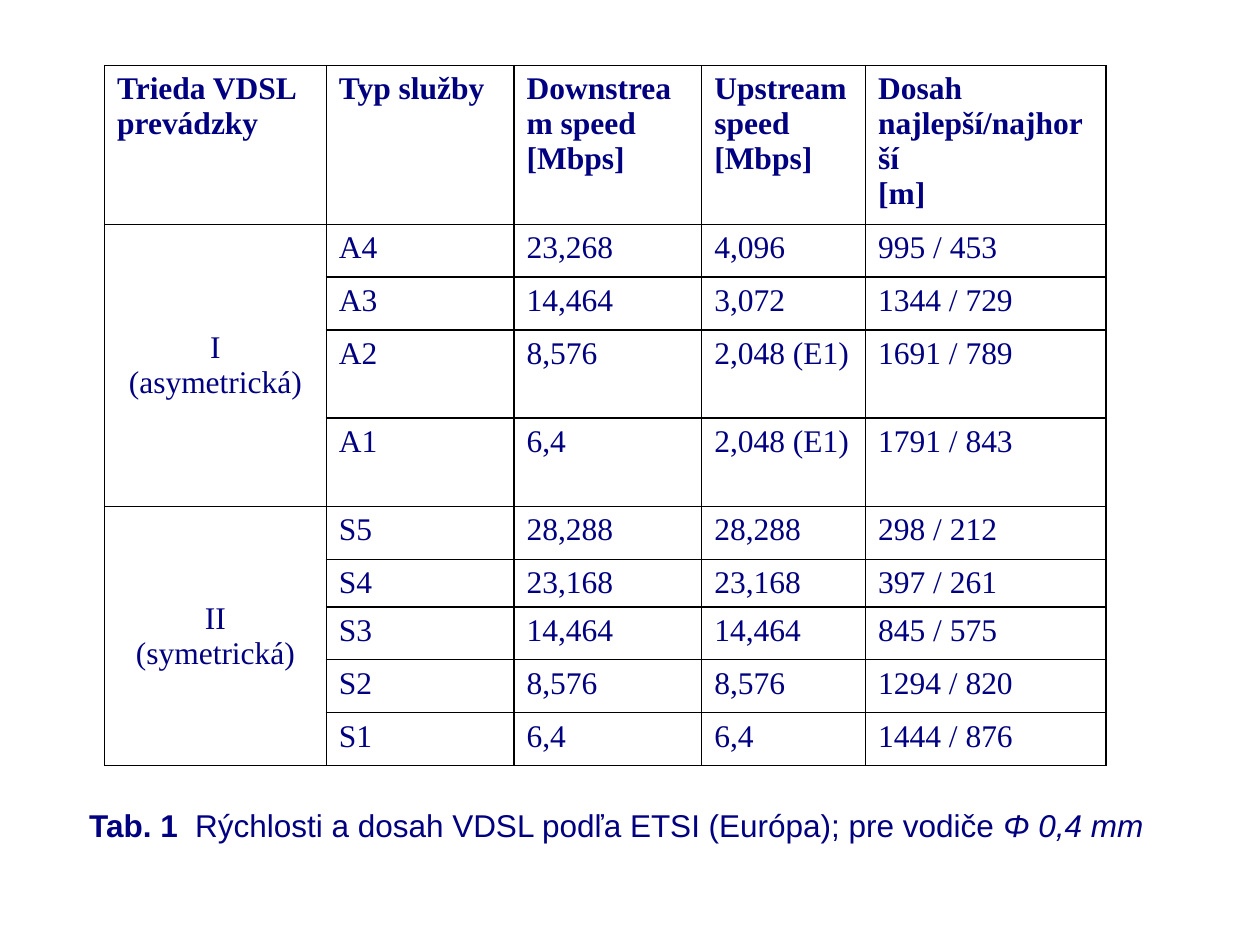
from lxml import etree
from pptx import Presentation
from pptx.dml.color import RGBColor
from pptx.enum.text import MSO_ANCHOR, PP_ALIGN
from pptx.oxml.ns import qn
from pptx.util import Inches, Pt

MIDDLE = MSO_ANCHOR.MIDDLE
CENTER = PP_ALIGN.CENTER
SIDES = ("a:lnL", "a:lnR", "a:lnT", "a:lnB")

NAVY, BLACK = "000080", "000000"
SERIF, SANS = "Times New Roman", "Arial"

COLS = [1.76, 1.49, 1.49, 1.3, 1.91]
ROWS = [1.26, 0.42, 0.42, 0.7, 0.7, 0.42, 0.34, 0.42, 0.42, 0.42]

HEAD = ["Trieda VDSL prevádzky", "Typ služby", "Downstream speed\n[Mbps]",
        "Upstream speed\n[Mbps]", "Dosah najlepší/najhorší\n[m]"]
GROUPS = {
    "I\n(asymetrická)": [
        ["A4", "23,268", "4,096", "995 / 453"],
        ["A3", "14,464", "3,072", "1344 / 729"],
        ["A2", "8,576", "2,048 (E1)", "1691 / 789"],
        ["A1", "6,4", "2,048 (E1)", "1791 / 843"],
    ],
    "II\n(symetrická)": [
        ["S5", "28,288", "28,288", "298 / 212"],
        ["S4", "23,168", "23,168", "397 / 261"],
        ["S3", "14,464", "14,464", "845 / 575"],
        ["S2", "8,576", "8,576", "1294 / 820"],
        ["S1", "6,4", "6,4", "1444 / 876"],
    ],
}


def color(code):
    return RGBColor.from_string(code)


class Page:
    def __init__(self, slide, size=18, ink=NAVY):
        self.slide, self.size, self.ink = slide, size, ink

    def style(self, font, **form):
        for key, value in {"size": Pt(self.size), **form}.items():
            setattr(font, key, value)
        font.color.rgb = color(self.ink)

    def border(self, cell):
        props = cell._tc.get_or_add_tcPr()
        for spot, side in enumerate(SIDES):
            line = etree.Element(qn(side), w=str(Pt(1)))
            fill = etree.SubElement(line, qn("a:solidFill"))
            etree.SubElement(fill, qn("a:srgbClr"), val=BLACK)
            props.insert(spot, line)

    def label(self, cell, text, bold=False, align=None):
        cell.text = text
        for para in cell.text_frame.paragraphs:
            para.alignment = align
            for run in para.runs:
                self.style(run.font, name=SERIF, bold=bold)

    def table(self, left, top, cols, rows):
        frame = self.slide.shapes.add_table(
            len(rows), len(cols), Inches(left), Inches(top),
            Inches(sum(cols)), Inches(sum(rows)))
        grid = frame.table
        grid.first_row = grid.horz_banding = False
        for col, width in zip(grid.columns, cols):
            col.width = Inches(width)
        for row, height in zip(grid.rows, rows):
            row.height = Inches(height)
        for cell in grid.iter_cells():
            cell.fill.background()
            self.border(cell)
        return grid

    def caption(self, left, top, width, height, parts, tab):
        box = self.slide.shapes.add_textbox(
            Inches(left), Inches(top), Inches(width), Inches(height))
        box.text_frame.word_wrap = True
        para = box.text_frame.paragraphs[0]
        # Tab stop between the label and the title
        stops = etree.SubElement(para._p.get_or_add_pPr(), qn("a:tabLst"))
        etree.SubElement(stops, qn("a:tab"), pos=str(Inches(tab)), algn="l")
        for text, form in parts:
            run = para.add_run()
            run.text = text
            self.style(run.font, name=SANS, **form)


def main():
    deck = Presentation()
    deck.slide_width, deck.slide_height = Inches(10), Inches(7.5)
    page = Page(deck.slides.add_slide(deck.slide_layouts[6]))

    # Table head
    grid = page.table(0.83, 0.52, COLS, ROWS)
    for col, text in enumerate(HEAD):
        page.label(grid.cell(0, col), text, bold=True)

    # Service classes, each with one merged name cell
    top = 1
    for name, lines in GROUPS.items():
        first = grid.cell(top, 0)
        first.merge(grid.cell(top + len(lines) - 1, 0))
        first.vertical_anchor = MIDDLE
        page.label(first, name, align=CENTER)
        for row, line in enumerate(lines, top):
            for col, text in enumerate(line, 1):
                page.label(grid.cell(row, col), text)
        top += len(lines)

    # Caption
    page.caption(0.61, 6.35, 8.78, 0.4, [
        ("Tab. 1\t", {"bold": True}),
        ("Rýchlosti a dosah VDSL podľa ETSI (Európa); pre vodiče ", {}),
        ("Φ 0,4 mm", {"italic": True}),
    ], tab=0.84)

    deck.save("out.pptx")


if __name__ == "__main__":
    main()
